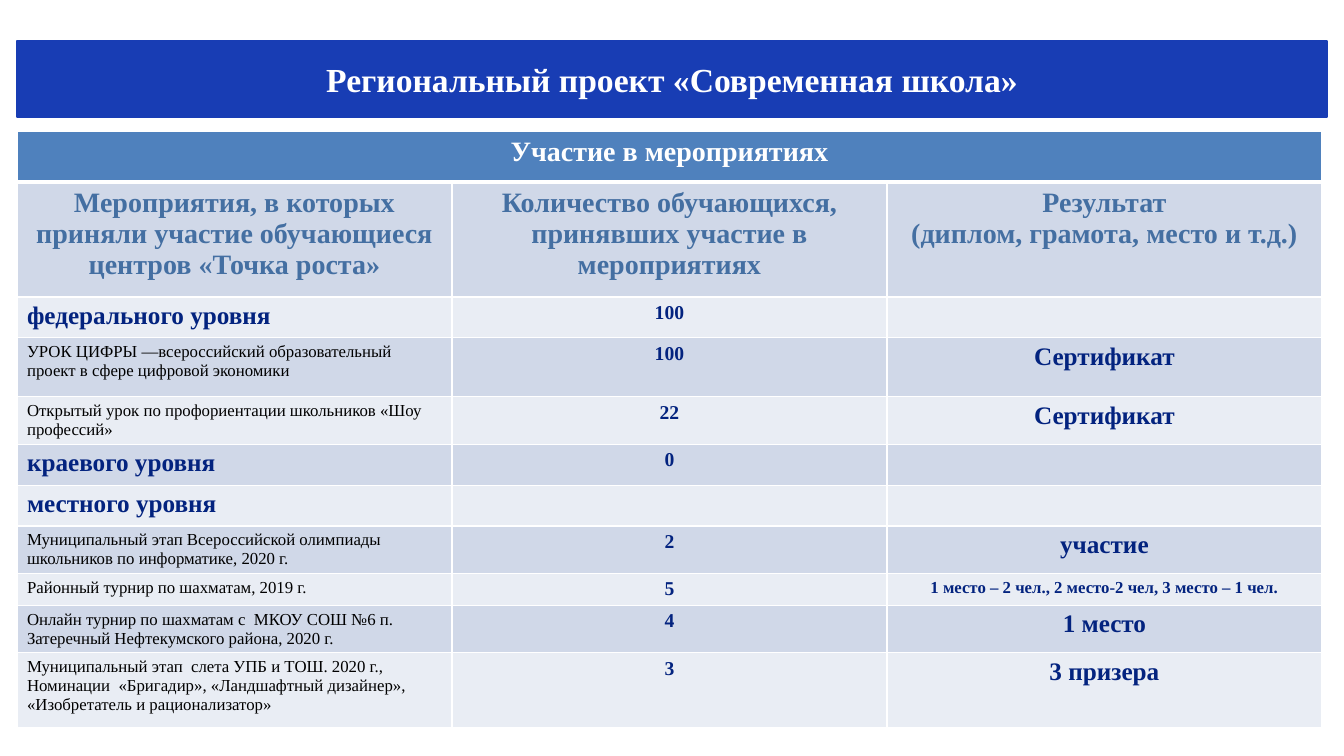
"""Builds a slide with a scroll banner title and a table of school events."""
from dataclasses import dataclass

from lxml import etree
from pptx import Presentation
from pptx.dml.color import RGBColor
from pptx.enum.text import MSO_ANCHOR, PP_ALIGN
from pptx.oxml.ns import qn
from pptx.util import Pt

LEFT, CENTER = PP_ALIGN.LEFT, PP_ALIGN.CENTER
MIDDLE = MSO_ANCHOR.MIDDLE
SLIDE_W, SLIDE_H = 1344, 756
SCALE = 12192000 / SLIDE_W
TITLE_ONLY = 5


@dataclass(frozen=True)
class Theme:
    font: str = "Times New Roman"
    white: str = "FFFFFF"
    black: str = "000000"
    banner: str = "183DB4"
    header: str = "4F81BD"
    heading: str = "446FA2"
    navy: str = "03237F"
    bands: tuple = ("D0D8E8", "E9EDF4")
    title_size: int = 24
    header_size: int = 20
    level_size: int = 18
    count_size: int = 14
    small_size: int = 12


THEME = Theme()
LEVEL = (THEME.level_size, THEME.navy, True, LEFT)
EVENT = (THEME.small_size, THEME.black, False, LEFT)
COUNT = (THEME.count_size, THEME.navy, True, CENTER)
RESULT = (THEME.level_size, THEME.navy, True, CENTER)
PLACES = (THEME.small_size, THEME.navy, True, CENTER)
HEADING = (THEME.header_size, THEME.heading, True, CENTER)
HEADER = (THEME.header_size, THEME.white, True, CENTER)
TITLE = (THEME.title_size, THEME.white, True, CENTER)

HEADINGS = (
    "Мероприятия, в которых приняли участие обучающиеся центров «Точка роста»",
    "Количество обучающихся, принявших участие в мероприятиях",
    "Результат\n(диплом, грамота, место и т.д.)",
)
EVENTS = (
    (40, LEVEL, "федерального уровня", "100", "", RESULT),
    (59, EVENT, "УРОК ЦИФРЫ —всероссийский образовательный проект в сфере цифровой экономики",
     "100", "Сертификат", RESULT),
    (47, EVENT, "Открытый урок по профориентации школьников «Шоу профессий»",
     "22", "Сертификат", RESULT),
    (39, LEVEL, "краевого уровня", "0", "", RESULT),
    (39, LEVEL, "местного уровня", "", "", RESULT),
    (47, EVENT, "Муниципальный этап Всероссийской олимпиады школьников по информатике, 2020 г.",
     "2", "участие", RESULT),
    (32, EVENT, "Районный турнир по шахматам, 2019 г.",
     "5", "1 место – 2 чел., 2 место-2 чел, 3 место – 1 чел.", PLACES),
    (47, EVENT, "Онлайн турнир по шахматам с  МКОУ СОШ №6 п. Затеречный Нефтекумского района, 2020 г.",
     "4", "1 место", RESULT),
    (75, EVENT, "Муниципальный этап  слета УПБ и ТОШ. 2020 г.,\n"
     "Номинации  «Бригадир», «Ландшафтный дизайнер»,  «Изобретатель и рационализатор»",
     "3", "3 призера", RESULT),
)


def px(n):
    return round(n * SCALE)


class SlideBuilder:
    def __init__(self, prs, theme):
        self.theme = theme
        self.slide = prs.slides.add_slide(prs.slide_layouts[TITLE_ONLY])

    def put_text(self, tf, text, style):
        size, color, bold, align = style
        tf.text = text
        for p in tf.paragraphs:
            p.alignment = align
            for r in p.runs:
                r.font.name = self.theme.font
                r.font.size = Pt(size)
                r.font.bold = bold
                r.font.color.rgb = RGBColor.from_string(color)

    def banner(self, text, x, y, w, h):
        sp = self.slide.shapes.title
        sp.left, sp.top, sp.width, sp.height = map(px, (x, y, w, h))
        geom = etree.SubElement(sp.element.spPr, qn("a:prstGeom"), prst="horizontalScroll")
        etree.SubElement(geom, qn("a:avLst"))
        color = RGBColor.from_string(self.theme.banner)
        sp.fill.solid()
        sp.fill.fore_color.rgb = color
        sp.line.color.rgb = color
        sp.line.width = Pt(2)
        sp.text_frame.word_wrap = True
        sp.text_frame.vertical_anchor = MIDDLE
        self.put_text(sp.text_frame, text, TITLE)

    def borders(self, cell, bottom):
        tc_pr = cell._tc.get_or_add_tcPr()
        for side, width in (("L", 1), ("R", 1), ("T", 1), ("B", bottom)):
            ln = etree.SubElement(tc_pr, qn(f"a:ln{side}"), w=str(Pt(width)))
            fill = etree.SubElement(ln, qn("a:solidFill"))
            etree.SubElement(fill, qn("a:srgbClr"), val=self.theme.white)

    def cell(self, cell, text, style, fill, bottom=1):
        self.borders(cell, bottom)
        cell.fill.solid()
        cell.fill.fore_color.rgb = RGBColor.from_string(fill)
        self.put_text(cell.text_frame, text, style)

    def table(self, x, y, col_w, heights, rows):
        cols = len(rows[0])
        table = self.slide.shapes.add_table(
            len(rows), cols, px(x), px(y), px(col_w * cols), px(sum(heights))).table
        for col in table.columns:
            col.width = px(col_w)
        for i, (height, row) in enumerate(zip(heights, rows)):
            table.rows[i].height = px(height)
            fill = self.theme.bands[(i - 1) % 2] if i else self.theme.header
            for j, (text, style) in enumerate(row):
                self.cell(table.cell(i, j), text, style, fill, 1 if i else 3)
        table.cell(0, 0).merge(table.cell(0, cols - 1))


def main():
    prs = Presentation()
    prs.slide_width, prs.slide_height = px(SLIDE_W), px(SLIDE_H)
    s = SlideBuilder(prs, THEME)
    s.banner("Региональный проект «Современная школа»", 17, 41, 1310, 76)
    rows = [
        [("Участие в мероприятиях", HEADER), ("", HEADER), ("", HEADER)],
        [(text, HEADING) for text in HEADINGS],
    ]
    rows += [[(name, style), (count, COUNT), (result, result_style)]
             for _, style, name, count, result, result_style in EVENTS]
    heights = [51, 115] + [event[0] for event in EVENTS]
    s.table(17, 131, 435, heights, rows)
    prs.save("out.pptx")


if __name__ == "__main__":
    main()
